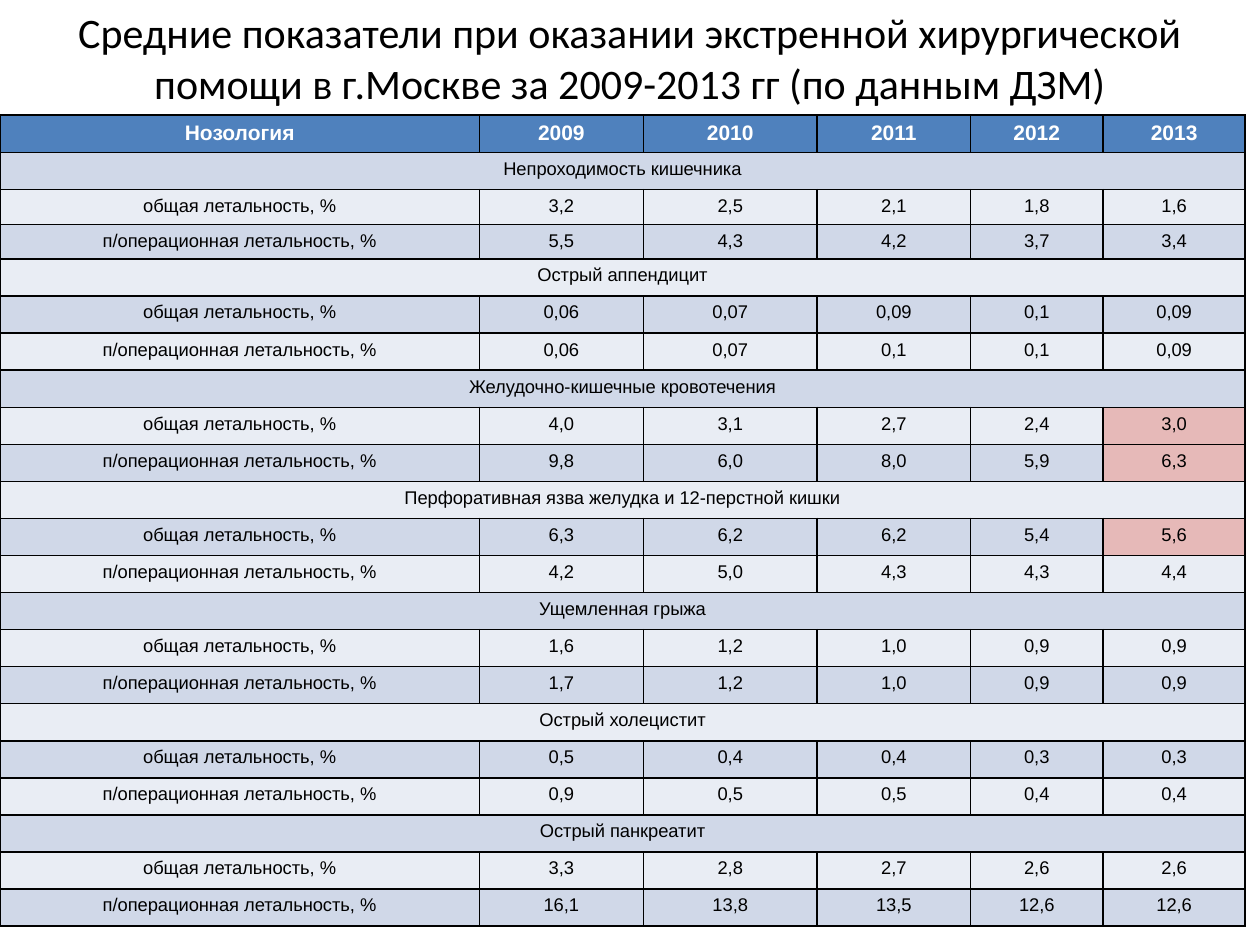
from lxml import etree
from pptx import Presentation
from pptx.dml.color import RGBColor
from pptx.enum import text as t
from pptx.oxml import ns
from pptx.util import Pt

YEARS = ["2009", "2010", "2011", "2012", "2013"]
RATES = ["общая летальность, %", "п/операционная летальность, %"]
GROUPS = [
    ("Непроходимость кишечника", "3,2 2,5 2,1 1,8 1,6", "5,5 4,3 4,2 3,7 3,4"),
    ("Острый аппендицит", "0,06 0,07 0,09 0,1 0,09", "0,06 0,07 0,1 0,1 0,09"),
    ("Желудочно-кишечные кровотечения", "4,0 3,1 2,7 2,4 3,0", "9,8 6,0 8,0 5,9 6,3"),
    ("Перфоративная язва желудка и 12-перстной кишки",
     "6,3 6,2 6,2 5,4 5,6", "4,2 5,0 4,3 4,3 4,4"),
    ("Ущемленная грыжа", "1,6 1,2 1,0 0,9 0,9", "1,7 1,2 1,0 0,9 0,9"),
    ("Острый холецистит", "0,5 0,4 0,4 0,3 0,3", "0,9 0,5 0,5 0,4 0,4"),
    ("Острый панкреатит", "3,3 2,8 2,7 2,6 2,6", "16,1 13,8 13,5 12,6 12,6"),
]
WIDTHS = [274, 93.6, 99.4, 87.6, 75.8, 81.2]
ROW, LOW = 21.2, 19.4
LOW_ROWS = (2, 3)
HIGH = {(8, 5), (9, 5), (11, 5)}  # cells marked in red


def color(code):
    return RGBColor.from_string(code)


class Deck:
    ink, white = "000000", "FFFFFF"
    head, bands, mark = "4F81BD", ("E9EDF4", "D0D8E8"), "E6B9B8"

    def __init__(self):
        self.prs = Presentation()
        self.prs.slide_width, self.prs.slide_height = Pt(720), Pt(540)
        self.slide = self.prs.slides.add_slide(self.prs.slide_layouts[6])

    def label(self, frame, words, font, size, ink, bold=False):
        para = frame.paragraphs[0]
        para.text = words
        para.alignment = t.PP_ALIGN.CENTER
        para.font.name, para.font.size, para.font.bold = font, Pt(size), bold
        para.font.color.rgb = color(ink)

    def title(self, words, x, y, w, h):
        frame = self.slide.shapes.add_textbox(Pt(x), Pt(y), Pt(w), Pt(h)).text_frame
        frame.word_wrap = True
        frame.vertical_anchor = t.MSO_ANCHOR.MIDDLE
        self.label(frame, words, "Calibri", 24, self.ink)

    def border(self, cell):
        props = cell._tc.get_or_add_tcPr()
        for side in ("lnL", "lnR", "lnT", "lnB"):
            line = etree.SubElement(props, ns.qn("a:" + side), w=str(Pt(1)))
            fill = etree.SubElement(line, ns.qn("a:solidFill"))
            etree.SubElement(fill, ns.qn("a:srgbClr"), val=self.ink)

    def cell(self, cell, words, fill, top):
        self.border(cell)
        cell.fill.solid()
        cell.fill.fore_color.rgb = color(fill)
        size, ink = (12, self.white) if top else (10.5, self.ink)
        self.label(cell.text_frame, words, "Arial", size, ink, top)

    def table(self, rows, x, y):
        """Draw rows of text; a row with one entry spans the full width."""
        highs = [LOW if r in LOW_ROWS else ROW for r in range(len(rows))]
        grid = self.slide.shapes.add_table(
            len(rows), len(WIDTHS), Pt(x), Pt(y), Pt(sum(WIDTHS)), Pt(sum(highs))).table
        for col, wide in zip(grid.columns, WIDTHS):
            col.width = Pt(wide)
        for r, (row, high) in enumerate(zip(rows, highs)):
            grid.rows[r].height = Pt(high)
            if len(row) == 1:
                grid.cell(r, 0).merge(grid.cell(r, len(WIDTHS) - 1))
            band = self.bands[r % 2] if r else self.head
            for c in range(len(WIDTHS)):
                words = row[c] if c < len(row) else ""
                fill = self.mark if (r, c) in HIGH else band
                self.cell(grid.cell(r, c), words, fill, r == 0)


def main():
    deck = Deck()
    deck.title("Средние показатели при оказании экстренной хирургической помощи "
               "в г.Москве за 2009-2013 гг (по данным ДЗМ)", 8.6, 0, 702.8, 65.6)
    rows = [["Нозология"] + YEARS]
    for name, *rates in GROUPS:
        rows.append([name])
        rows += [[rate] + vals.split() for rate, vals in zip(RATES, rates)]
    deck.table(rows, 0, 65.6)
    deck.prs.save("out.pptx")


if __name__ == "__main__":
    main()
